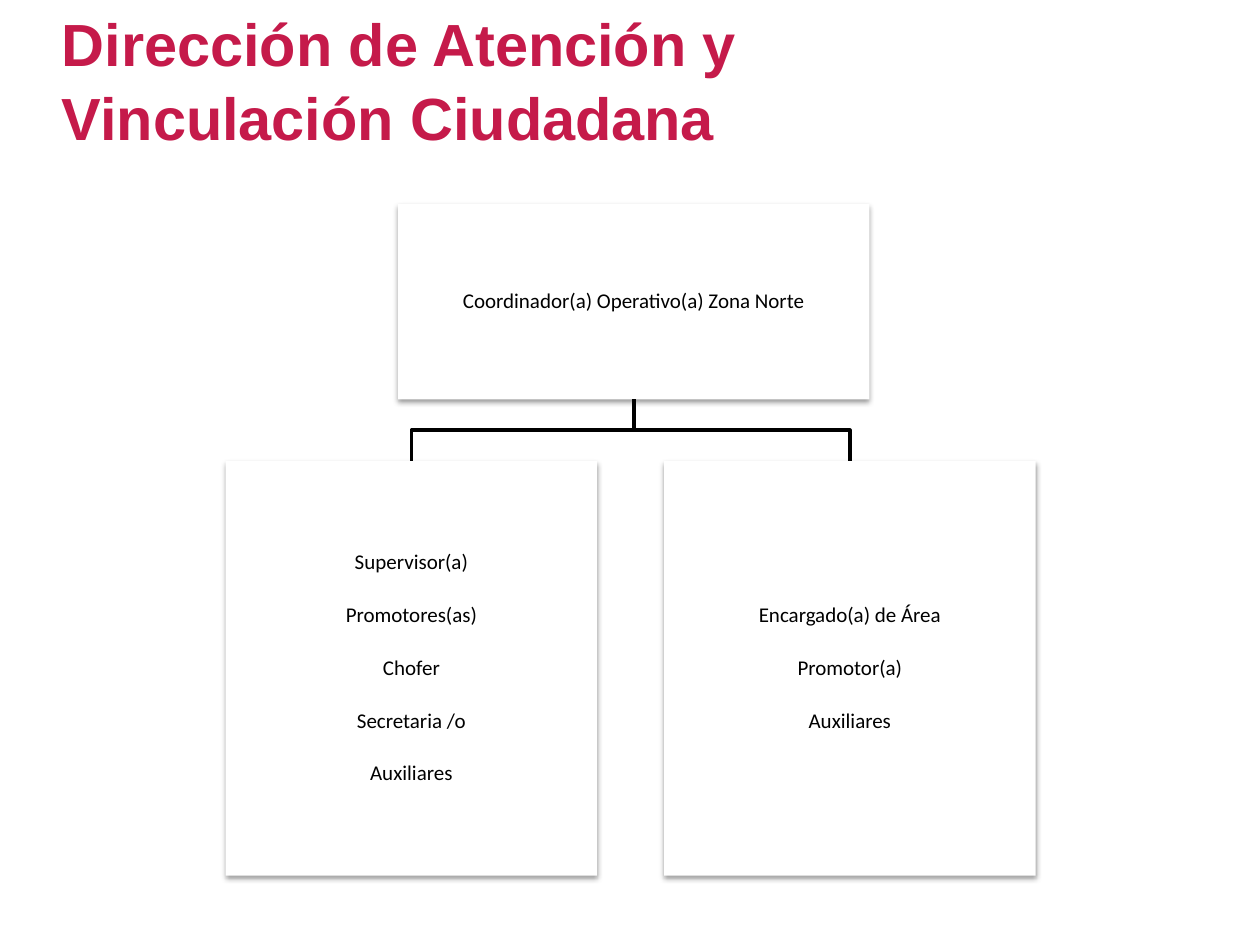
from lxml.etree import SubElement
from pptx import Presentation
from pptx.dml.color import RGBColor
from pptx.enum.shapes import MSO_SHAPE
from pptx.enum.text import MSO_ANCHOR, MSO_AUTO_SIZE, PP_ALIGN
from pptx.oxml.ns import qn
from pptx.util import Inches, Pt

WIDE, HIGH = Inches(10), Inches(7.5)
TITLE = dict(name="Arial", size=Pt(34), bold=True)
LABEL = dict(name="Calibri", size=Pt(12))
LEAD = "Coordinador(a) Operativo(a) Zona Norte"
TEAMS = [
    ["Supervisor(a)", "Promotores(as)", "Chofer", "Secretaria /o", "Auxiliares"],
    ["Encargado(a) de Área", "Promotor(a)", "Auxiliares"],
]


def tint(code):
    return RGBColor.from_string(code)


def place(left, top, width, height):
    return [int(side * share / 100) for side, share in
            zip((WIDE, HIGH, WIDE, HIGH), (left, top, width, height))]


def set_all(item, **values):
    for key, value in values.items():
        setattr(item, key, value)


def add_title(slide, text):
    title = slide.shapes.title
    left, top, width, height = place(3.9, 0.13, 64, 16.67)
    set_all(title, left=left, top=top, width=width, height=height)
    frame = title.text_frame
    set_all(frame, text=text, word_wrap=True, auto_size=MSO_AUTO_SIZE.NONE,
            vertical_anchor=MSO_ANCHOR.BOTTOM)
    para = frame.paragraphs[0]
    set_all(para, alignment=PP_ALIGN.LEFT, line_spacing=1.04)
    set_all(para.font, **TITLE)
    para.font.color.rgb = tint("C51A4A")


def add_shade(shape):
    effect = SubElement(shape.fill._xPr, qn("a:effectLst"))
    shade = SubElement(effect, qn("a:outerShdw"), blurRad=str(Pt(3.1)),
                       dist=str(Pt(1.6)), dir="5400000", rotWithShape="0")
    color = SubElement(shade, qn("a:srgbClr"), val="000000")
    SubElement(color, qn("a:alpha"), val="38000")


def add_box(slide, lines, *area):
    box = slide.shapes.add_shape(MSO_SHAPE.RECTANGLE, *place(*area))
    box.fill.solid()
    box.fill.fore_color.rgb = tint("FFFFFF")
    box.line.fill.background()
    add_shade(box)
    frame = box.text_frame
    inset = Inches(0.01)
    set_all(frame, text="\n".join(lines), word_wrap=True,
            vertical_anchor=MSO_ANCHOR.MIDDLE, margin_left=inset,
            margin_right=inset, margin_top=inset, margin_bottom=inset)
    for row, para in enumerate(frame.paragraphs):
        set_all(para, alignment=PP_ALIGN.CENTER, line_spacing=0.9,
                space_before=Pt(17.2 if row else 0))
        set_all(para.font, **LABEL)
        para.font.color.rgb = tint("000000")
    return box


def add_branch(slide, head, team):
    start, end = (box.left + box.width // 2 for box in (head, team))
    base = head.top + head.height
    mid = (base + team.top) // 2
    pen = slide.shapes.build_freeform(start, base)
    pen.add_line_segments([(start, mid), (end, mid), (end, team.top)], close=False)
    branch = pen.convert_to_shape()
    branch.shadow.inherit = False
    branch.fill.background()
    branch.line.color.rgb = tint("000000")
    branch.line.width = Pt(2)


def main():
    deck = Presentation()
    set_all(deck, slide_width=WIDE, slide_height=HIGH)
    slide = deck.slides.add_slide(deck.slide_layouts[5])
    add_title(slide, "Dirección de Atención y Vinculación Ciudadana")
    head = add_box(slide, [LEAD], 31.6, 21.6, 37.4, 20.67)
    for col, lines in enumerate(TEAMS):
        team = add_box(slide, lines, 17.9 + 34.8 * col, 48.8, 29.5, 43.87)
        add_branch(slide, head, team)
    deck.save("out.pptx")


if __name__ == "__main__":
    main()
